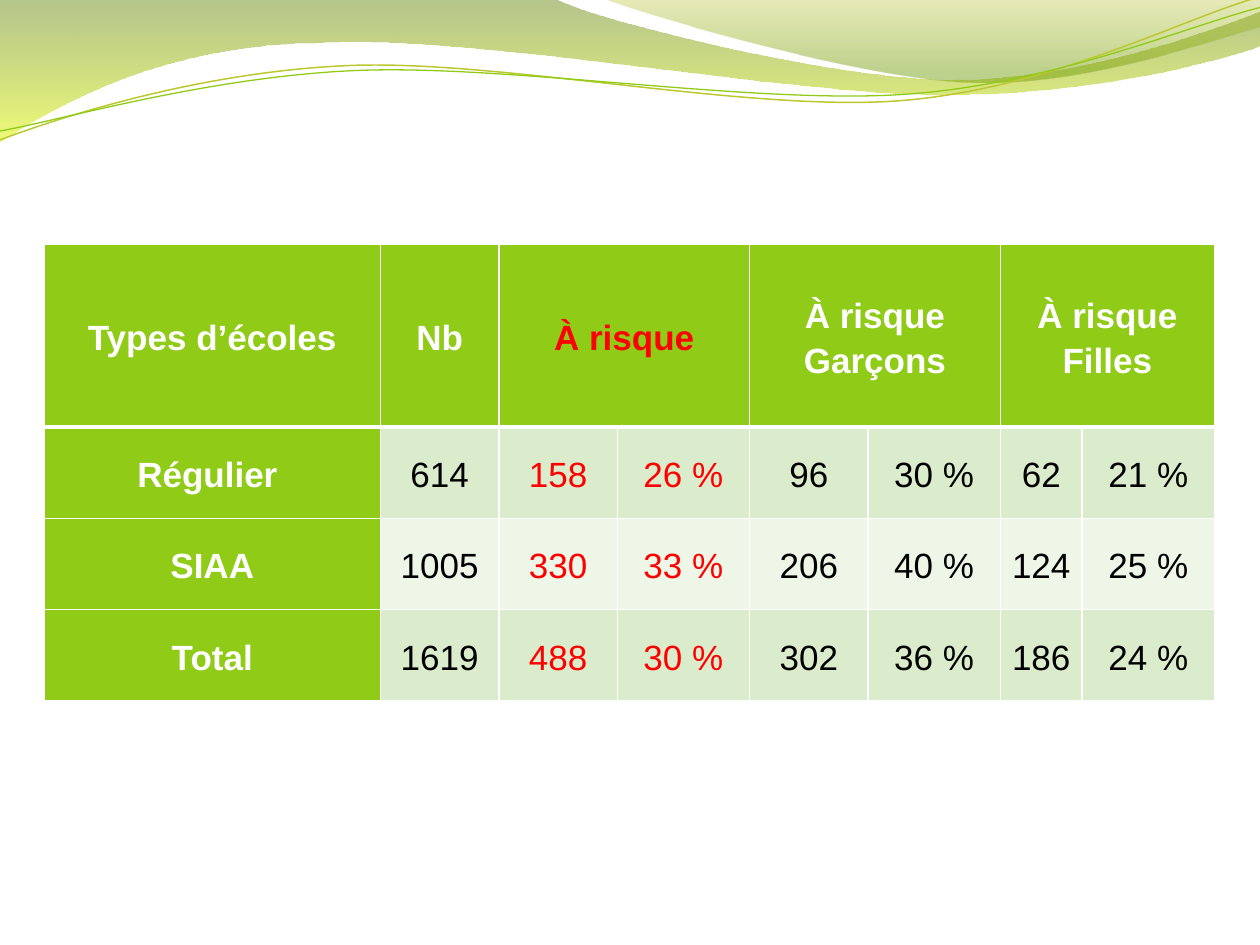
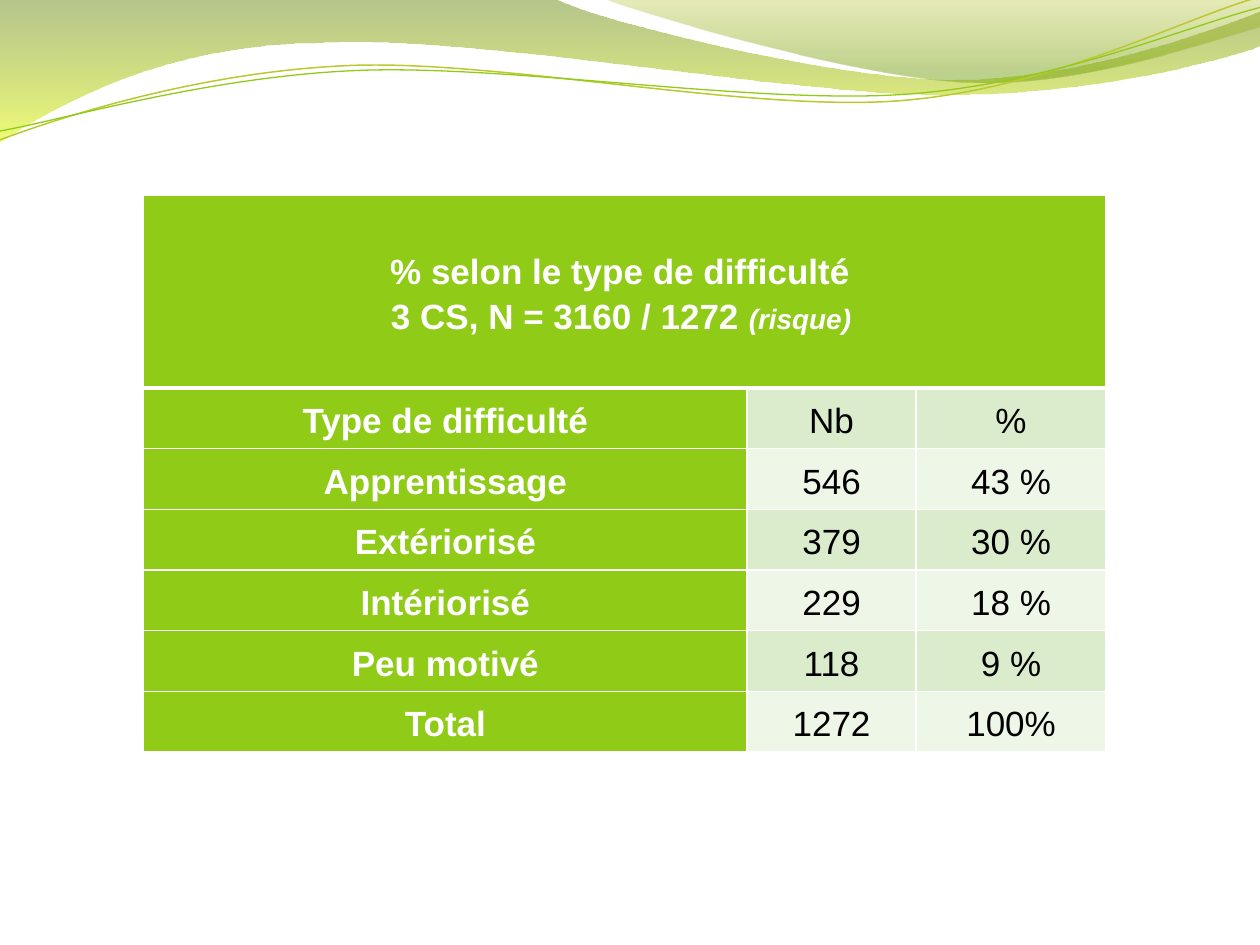
from math import cos, radians, sin

from lxml import etree
from pptx import Presentation
from pptx.dml.color import RGBColor
from pptx.enum.text import MSO_ANCHOR, PP_ALIGN
from pptx.oxml.ns import qn
from pptx.util import Inches, Pt

CENTER, MIDDLE = PP_ALIGN.CENTER, MSO_ANCHOR.MIDDLE
WHITE = RGBColor(0xFF, 0xFF, 0xFF)
BLACK = RGBColor(0x00, 0x00, 0x00)
RED = RGBColor(0xFF, 0x00, 0x00)
GREEN = RGBColor(0x8F, 0xCB, 0x17)
OLIVE = RGBColor(0xBB, 0xC8, 0x30)
BANDS = RGBColor(0xEE, 0xF6, 0xE8), RGBColor(0xDB, 0xEC, 0xCC)
FONT = "Arial"
BLANK_LAYOUT = 6
LINE_TILT = 2.7

WAVE_BANDS = [
    {
        "outline": [
            [(0, -0.01)], [(4.4, -0.01)],
            [(4.76, 0.17), (6.64, 0.63), (7.58, 0.63)],
            [(8.53, 0.63), (9.58, 0.26), (10, 0.09)],
            [(10.01, 0.36)],
            [(9.83, 0.44), (8.7, 0.76), (7.46, 0.75)],
            [(6.22, 0.75), (3.82, 0.28), (2.57, 0.34)],
            [(1.29, 0.35), (0.46, 0.83), (-0.01, 1.13)],
            [(0, -0.01)],
        ],
        "stops": [(0, RGBColor(0x5C, 0x80, 0x02), 45), (1, RGBColor(0xE4, 0xF9, 0x06), 55)],
    },
    {
        "outline": [
            [(4.79, -0.01)],
            [(5.09, 0.11), (6.82, 0.62), (7.69, 0.65)],
            [(8.56, 0.69), (9.61, 0.32), (10, 0.21)],
            [(10, 0)],
            [(4.79, -0.01)],
        ],
        "stops": [(0, RGBColor(0xAD, 0xBB, 0x15), 30), (0.8, RGBColor(0x6E, 0x9B, 0x00), 45)],
    },
]
WAVE_LINES = [
    {
        "outline": [
            [(0, 1.11)],
            [(0.48, 0.93), (1.58, 0.57), (2.77, 0.52)],
            [(3.95, 0.47), (5.93, 0.89), (7.13, 0.8)],
            [(8.33, 0.71), (9.38, 0.15), (9.98, -0.02)],
        ],
        "center": (4.99, 0.58), "color": OLIVE, "width": 0.85,
    },
    {
        "outline": [
            [(0, 1.04)],
            [(0.47, 0.96), (1.64, 0.61), (2.83, 0.56)],
            [(4.03, 0.51), (5.97, 0.83), (7.17, 0.75)],
            [(8.36, 0.67), (9.41, 0.21), (10, 0.06)],
        ],
        "center": (5, 0.59), "color": GREEN, "width": 0.75,
    },
]

TABLES = [
    {
        "left": 0.35, "top": 1.94, "height": 3.62, "header_height": 1.45,
        "cols": [2.67, 0.94, 0.94, 1.05, 0.94, 1.05, 0.65, 1.05],
        "red_cols": (2, 3),
        "rows": [
            ["Types d’écoles", "Nb", "À risque", None, "À risque Garçons", None, "À risque Filles", None],
            ["Régulier ", "614", "158", "26 %", "96", "30 %", "62", "21 %"],
            ["SIAA", "1005", "330", "33 %", "206", "40 %", "124", "25 %"],
            ["Total", "1619", "488", "30 %", "302", "36 %", "186", "24 %"],
        ],
    },
    {
        "left": 1.14, "top": 1.55, "height": 4.42, "header_height": 1.53,
        "cols": [4.79, 1.34, 1.51],
        "red_cols": (),
        "header_note": "(risque) ",
        "rows": [
            ["% selon le type de difficulté \v3 CS, N = 3160 / 1272 ", None, None],
            ["Type de difficulté", "Nb", "%"],
            ["Apprentissage", "546", "43 %"],
            ["Extériorisé", "379", "30 %"],
            ["Intériorisé", "229", "18 %"],
            ["Peu motivé", "118", "9 %"],
            ["Total", "1272", "100%"],
        ],
    },
]


def turn(point, center, degrees):
    dx, dy = point[0] - center[0], point[1] - center[1]
    c, s = cos(radians(degrees)), sin(radians(degrees))
    return center[0] + dx * c - dy * s, center[1] + dx * s + dy * c


def add_wave(slide, outline, closed):
    start, *rest = [(Inches(x), Inches(y)) for part in outline for x, y in part]
    builder = slide.shapes.build_freeform(*start)
    builder.add_line_segments(rest, close=closed)
    sp = builder.convert_to_shape()
    sp.shadow.inherit = False
    segments = iter(list(sp._element.iter(qn("a:lnTo"))))
    for part in outline[1:]:
        group = [next(segments) for _ in part]
        if len(group) == 3:
            curve = etree.Element(qn("a:cubicBezTo"))
            group[0].addprevious(curve)
            for segment in group:
                curve.append(segment[0])
                segment.getparent().remove(segment)
    return sp


def add_waves(slide):
    for band in WAVE_BANDS:
        sp = add_wave(slide, band["outline"], True)
        sp.line.fill.background()
        sp.fill.gradient()
        sp.fill.gradient_angle = 270
        for stop, (position, color, _) in zip(sp.fill.gradient_stops, band["stops"]):
            stop.position = position
            stop.color.rgb = color
        for clr, (_, _, opacity) in zip(sp._element.spPr.iter(qn("a:srgbClr")), band["stops"]):
            etree.SubElement(clr, qn("a:alpha"), val=str(opacity * 1000))
    for wave in WAVE_LINES:
        level = [[turn(pt, wave["center"], LINE_TILT) for pt in part] for part in wave["outline"]]
        sp = add_wave(slide, level, False)
        sp.rotation = 360 - LINE_TILT
        sp.fill.background()
        sp.line.color.rgb = wave["color"]
        sp.line.width = Pt(wave["width"])


def set_borders(cell, row):
    widths = {"L": 1, "R": 1, "T": 3 if row == 1 else 1, "B": 3 if row == 0 else 1}
    tc_pr = cell._tc.get_or_add_tcPr()
    for side, width in widths.items():
        ln = etree.SubElement(tc_pr, qn(f"a:ln{side}"), w=str(Pt(width)))
        fill = etree.SubElement(ln, qn("a:solidFill"))
        etree.SubElement(fill, qn("a:srgbClr"), val=str(WHITE))


def format_run(r, size, bold, color):
    r.font.name = FONT
    r.font.size = Pt(size)
    r.font.bold = bold
    r.font.color.rgb = color


def format_cell(cell, row, col, red):
    heading = row == 0 or col == 0
    set_borders(cell, row)
    cell.fill.solid()
    cell.fill.fore_color.rgb = GREEN if heading else BANDS[row % 2]
    cell.vertical_anchor = MIDDLE
    cell.margin_left = cell.margin_right = Inches(0.05)
    cell.margin_top = cell.margin_bottom = 0
    p = cell.text_frame.paragraphs[0]
    p.alignment = CENTER
    p.line_spacing = 1.15
    for r in p.runs:
        format_run(r, 20, heading, RED if red else WHITE if heading else BLACK)


def add_data_table(slide, data):
    rows, cols = data["rows"], data["cols"]
    body = len(rows) - 1
    row_height = (data["height"] - data["header_height"]) / body
    heights = [data["header_height"]] + [row_height] * body
    frame = slide.shapes.add_table(
        len(rows), len(cols), Inches(data["left"]), Inches(data["top"]),
        Inches(sum(cols)), Inches(data["height"]))
    table = frame.table
    for column, width in zip(table.columns, cols):
        column.width = Inches(width)
    for line, height in zip(table.rows, heights):
        line.height = Inches(height)
    for i, values in enumerate(rows):
        for j, value in enumerate(values):
            cell = table.cell(i, j)
            if value is not None:
                cell.text_frame.paragraphs[0].text = value
            format_cell(cell, i, j, j in data["red_cols"])
    header = rows[0]
    for j, value in enumerate(header):
        end = j
        while end + 1 < len(header) and header[end + 1] is None:
            end += 1
        if value is not None and end > j:
            table.cell(0, j).merge(table.cell(0, end))
    if "header_note" in data:
        r = table.cell(0, 0).text_frame.paragraphs[0].add_run()
        r.text = data["header_note"]
        format_run(r, 16, True, WHITE)
        r.font.italic = True


def main():
    prs = Presentation()
    prs.slide_width, prs.slide_height = Inches(10), Inches(7.5)
    for data in TABLES:
        slide = prs.slides.add_slide(prs.slide_layouts[BLANK_LAYOUT])
        add_waves(slide)
        add_data_table(slide, data)
    prs.save("out.pptx")


if __name__ == "__main__":
    main()
